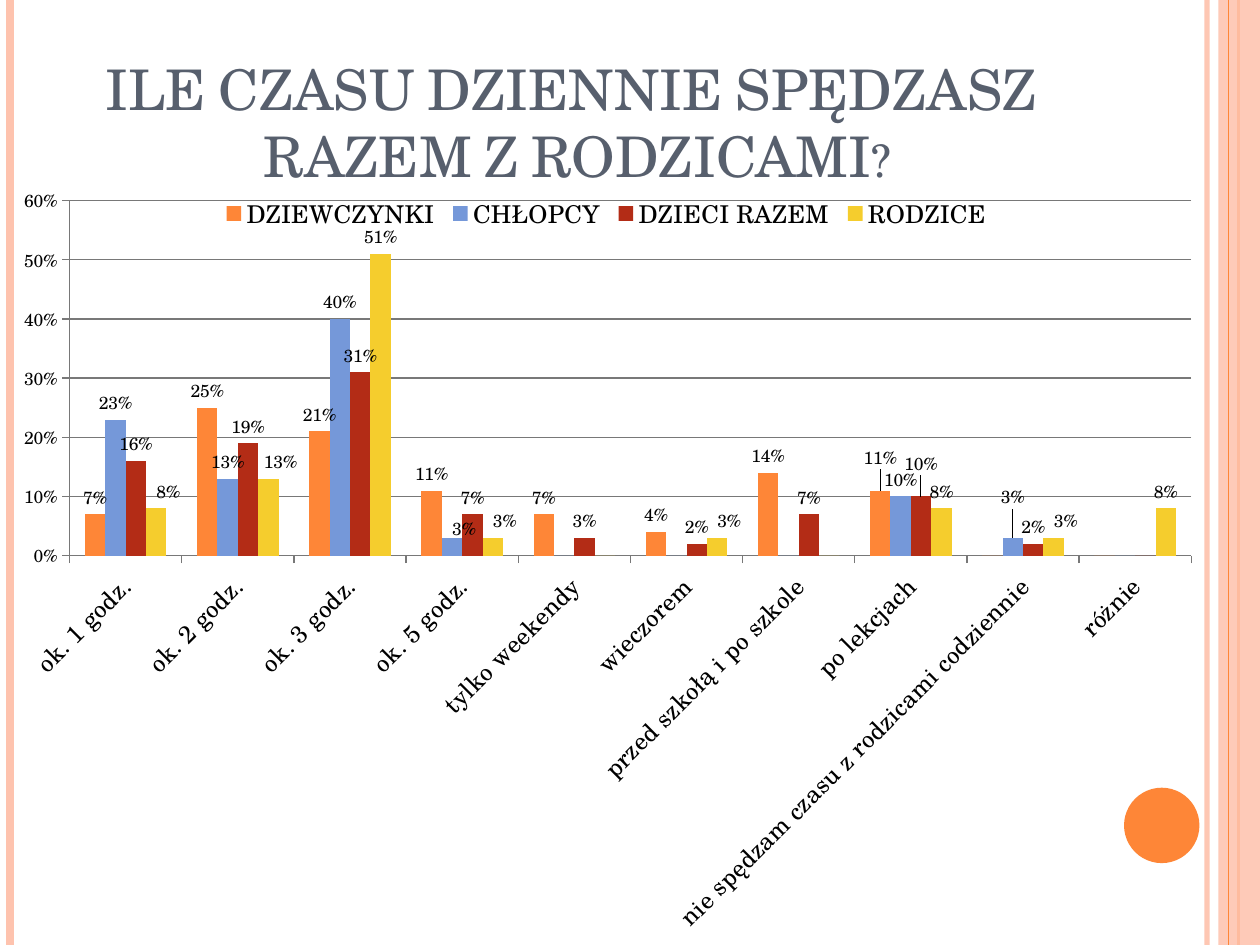
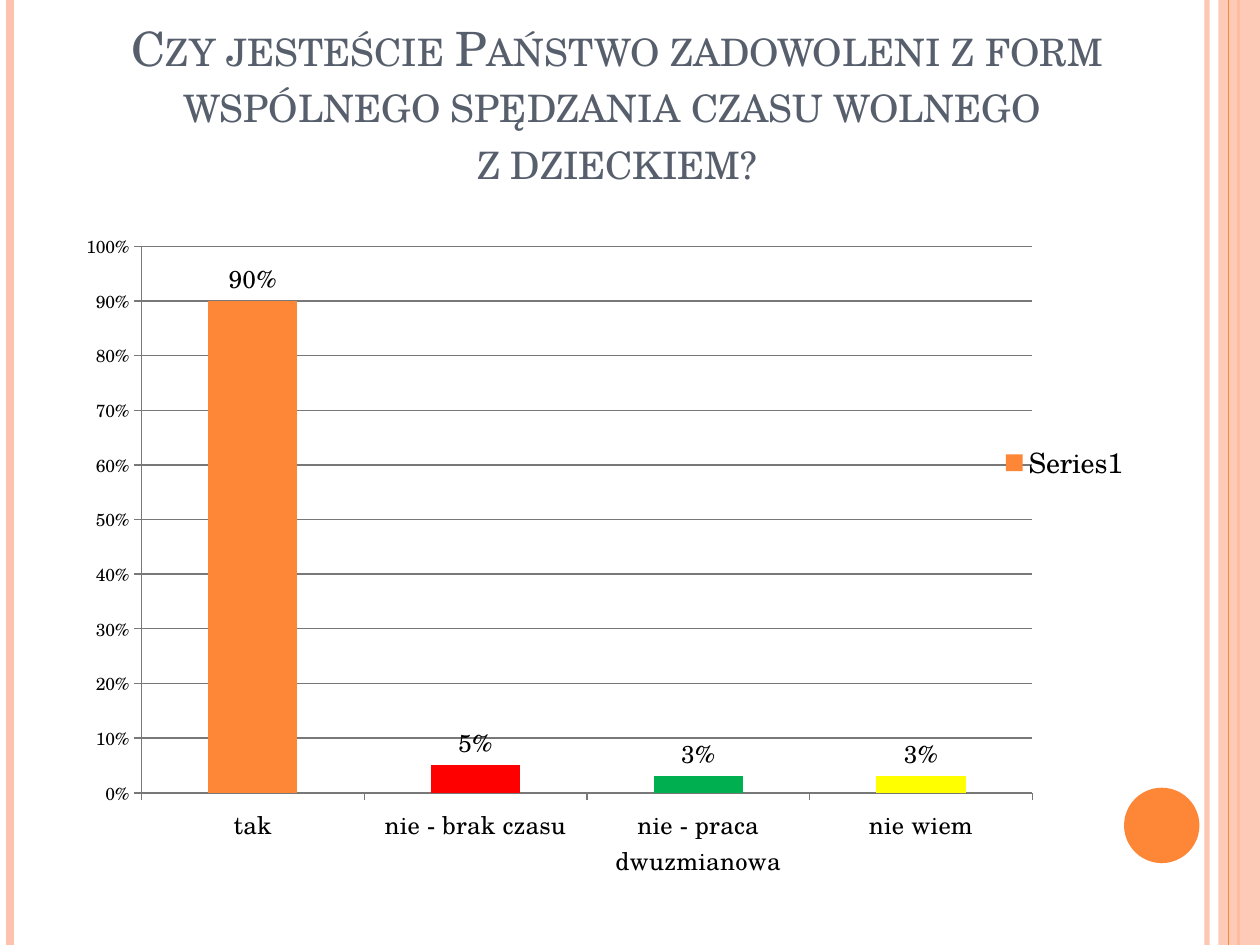
from dataclasses import dataclass, field
from typing import Any, NamedTuple

from lxml import etree
from pptx import Presentation
from pptx import util as u
from pptx.chart import data as chart_data
from pptx.dml import color
from pptx.enum import chart as ch, shapes, text
from pptx.oxml import ns


@dataclass(frozen=True)
class Theme:
    font: str = "TeX Gyre Schola"
    title: str = "575F6D"
    ink: str = "000000"
    grid: str = "787878"
    pale: str = "FEC3AE"
    orange: str = "FE8637"
    blue: str = "7598D9"
    brick: str = "B32C16"
    gold: str = "F5CD2D"
    red: str = "FF0000"
    green: str = "00B050"
    yellow: str = "FFFF00"
    axis_size: float = 10
    category_size: float = 14


class Box(NamedTuple):
    left: float
    top: float
    width: float
    height: float


class Stripe(NamedTuple):
    x: float
    color: str
    weight: float
    opacity: int = 100


class Solid(NamedTuple):
    preset: Any
    box: Box
    color: str
    opacity: int = 100


class Title(NamedTuple):
    box: Box
    lines: tuple[str, ...]
    size: float


@dataclass(frozen=True)
class Answers:
    name: str
    values: tuple[float, ...]
    color: str
    moved_labels: dict[int, tuple[float, float]] = field(default_factory=dict)
    bar_colors: dict[int, str] = field(default_factory=dict)


@dataclass(frozen=True)
class Survey:
    title: Title
    box: Box
    categories: tuple[str, ...]
    answers: tuple[Answers, ...]
    top_value: float
    plot: Box
    legend: Box
    legend_position: Any
    legend_size: float
    label_size: float
    category_rotation: int = 0


T = Theme()
WIDTH, HEIGHT = 25.4, 19.05

DECOR = (
    Stripe(24.33, T.pale, 3, 93),
    Stripe(0.2, T.pale, 4.5),
    Stripe(24.97, T.orange, 1.5),
    Solid(shapes.MSO_SHAPE.RECTANGLE, Box(24.56, 0, 0.84, HEIGHT), T.pale, 87),
    Stripe(24.76, T.orange, 0.75),
    Solid(shapes.MSO_SHAPE.OVAL, Box(22.66, 15.88, 1.52, 1.52), T.orange),
)

SURVEYS = (
    Survey(
        title=Title(Box(1.27, 0.76, 20.75, 3.18),
                    ("ILE CZASU DZIENNIE SPĘDZASZ ", "RAZEM Z RODZICAMI?"), 32),
        box=Box(0, 3.58, 24.21, 16.08),
        categories=("ok. 1 godz.", "ok. 2 godz.", "ok. 3 godz.", "ok. 5 godz.",
                    "tylko weekendy", "wieczorem", "przed szkołą i po szkole",
                    "po lekcjach", "nie spędzam czasu z rodzicami codziennie",
                    "różnie"),
        answers=(
            Answers("DZIEWCZYNKI",
                    (0.07, 0.25, 0.21, 0.11, 0.07, 0.04, 0.14, 0.11, 0, 0),
                    T.orange, {7: (0, -0.02)}),
            Answers("CHŁOPCY",
                    (0.23, 0.13, 0.4, 0.03, 0, 0, 0, 0.1, 0.03, 0),
                    T.blue, {3: (0.01, 0.01), 8: (0, -0.03)}),
            Answers("DZIECI RAZEM",
                    (0.16, 0.19, 0.31, 0.07, 0.03, 0.02, 0.07, 0.1, 0.02, 0),
                    T.brick, {7: (0, -0.02)}),
            Answers("RODZICE",
                    (0.08, 0.13, 0.51, 0.03, 0, 0.03, 0, 0.08, 0.03, 0.08),
                    T.gold, {0: (0.01, 0), 1: (0.01, 0), 3: (0.01, 0),
                             5: (0.01, 0), 8: (0.01, 0)}),
        ),
        top_value=0.6,
        plot=Box(0.058, 0.029, 0.934, 0.445),
        legend=Box(0.18, 0.02, 0.65, 0.05),
        legend_position=ch.XL_LEGEND_POSITION.TOP,
        legend_size=14,
        label_size=10,
        category_rotation=-45,
    ),
    Survey(
        title=Title(Box(1.27, 0.76, 22.35, 3.18),
                    ("Czy jesteście Państwo zadowoleni z form wspólnego "
                     "spędzania czasu wolnego ", "z dzieckiem?"), 27),
        box=Box(1.27, 4.45, 22.94, 13.54),
        categories=("tak", "nie - brak czasu", "nie - praca dwuzmianowa", "nie wiem"),
        answers=(
            Answers("Series1", (0.9, 0.05, 0.03, 0.03), T.orange,
                    bar_colors={1: T.red, 2: T.green, 3: T.yellow}),
        ),
        top_value=1,
        plot=Box(0.069, 0.038, 0.783, 0.814),
        legend=Box(0.82, 0.33, 0.12, 0.06),
        legend_position=ch.XL_LEGEND_POSITION.RIGHT,
        legend_size=16,
        label_size=14,
    ),
)


def rgb(value: str) -> color.RGBColor:
    return color.RGBColor.from_string(value)


def apply(target: Any, values: dict[str, Any]) -> None:
    for name, value in values.items():
        setattr(target, name, value)


def set_font(font: Any, size: float, ink: str = T.ink) -> None:
    apply(font, {"name": T.font, "size": u.Pt(size), "bold": False})
    font.color.rgb = rgb(ink)


def place(box: Box) -> tuple[u.Length, ...]:
    return tuple(u.Cm(v) for v in box)


def child(parent: Any, tag: str, **attrs: Any) -> Any:
    values = {k: str(v) for k, v in attrs.items()}
    return etree.SubElement(parent, ns.qn(tag), values)


def set_fill(fill: Any, value: str, opacity: int = 100) -> None:
    fill.solid()
    fill.fore_color.rgb = rgb(value)
    if opacity < 100:
        clr = fill._xPr.find(".//" + ns.qn("a:srgbClr"))
        child(clr, "a:alpha", val=opacity * 1000)


def add_stripe(s: Any, stripe: Stripe) -> None:
    x = u.Cm(stripe.x)
    sp = s.shapes.add_connector(shapes.MSO_CONNECTOR.STRAIGHT, x, 0, x, u.Cm(HEIGHT))
    sp.line.width = u.Pt(stripe.weight)
    set_fill(sp.line.fill, stripe.color, stripe.opacity)
    child(sp._element.spPr, "a:effectLst")


def add_solid(s: Any, solid: Solid) -> None:
    sp = s.shapes.add_shape(solid.preset, *place(solid.box))
    sp.shadow.inherit = False
    set_fill(sp.fill, solid.color, solid.opacity)
    sp.line.fill.background()


def add_title(s: Any, title: Title) -> None:
    tf = s.shapes.add_textbox(*place(title.box)).text_frame
    apply(tf, {"word_wrap": True, "vertical_anchor": text.MSO_ANCHOR.BOTTOM})
    p = tf.paragraphs[0]
    p.alignment = text.PP_ALIGN.CENTER
    for i, line in enumerate(title.lines):
        if i:
            p.add_line_break()
        r = p.add_run()
        r.text = line
        set_font(r.font, title.size, T.title)
        r.font._element.set("cap", "small")


def make_layout(values: dict[str, Any]) -> Any:
    layout = etree.Element(ns.qn("c:layout"))
    manual = child(layout, "c:manualLayout")
    for tag, value in values.items():
        child(manual, f"c:{tag}", val=value)
    return layout


def set_layout(parent: Any, index: int, box: Box, **extra: str) -> None:
    for old in parent.findall(ns.qn("c:layout")):
        parent.remove(old)
    values = {**extra, "xMode": "edge", "yMode": "edge"}
    values.update(zip("xywh", box))
    parent.insert(index, make_layout(values))


def add_labels(ser: Any, answers: Answers, size: float) -> None:
    labels = ser.data_labels
    apply(labels, {"show_value": True, "number_format": "0%",
                   "number_format_is_linked": False,
                   "position": ch.XL_LABEL_POSITION.OUTSIDE_END})
    set_font(labels.font, size)
    for i, (dx, dy) in answers.moved_labels.items():
        label = ser.points[i].data_label
        label.position = ch.XL_LABEL_POSITION.OUTSIDE_END
        label._dLbl.insert(1, make_layout({"x": dx, "y": dy}))
    for i, value in enumerate(answers.values):
        if not value:
            label = ser.points[i].data_label
            label.position = ch.XL_LABEL_POSITION.OUTSIDE_END
            for part in list(label._dLbl)[1:]:
                label._dLbl.remove(part)
            child(label._dLbl, "c:delete", val=1)


def style_axes(chart: Any, survey: Survey) -> None:
    sizes = ((chart.category_axis, T.category_size), (chart.value_axis, T.axis_size))
    for axis, size in sizes:
        set_font(axis.tick_labels.font, size)
        axis.major_tick_mark = ch.XL_TICK_MARK.OUTSIDE
        axis.format.line.color.rgb = rgb(T.grid)
    value_axis = chart.value_axis
    apply(value_axis, {"minimum_scale": 0, "maximum_scale": survey.top_value,
                       "major_unit": 0.1, "has_major_gridlines": True})
    value_axis.major_gridlines.format.line.color.rgb = rgb(T.grid)
    apply(value_axis.tick_labels, {"number_format": "0%",
                                   "number_format_is_linked": False})
    if survey.category_rotation:
        body = chart.category_axis._element.find(ns.qn("c:txPr")).find(ns.qn("a:bodyPr"))
        body.set("rot", str(survey.category_rotation * 60000))


def add_survey_chart(s: Any, survey: Survey) -> None:
    data = chart_data.CategoryChartData(number_format="0%")
    data.categories = survey.categories
    for answers in survey.answers:
        data.add_series(answers.name, answers.values)
    chart = s.shapes.add_chart(ch.XL_CHART_TYPE.COLUMN_CLUSTERED,
                               *place(survey.box), data).chart
    apply(chart, {"has_title": False, "has_legend": True})
    set_font(chart.font, T.axis_size)
    apply(chart.plots[0], {"vary_by_categories": False, "gap_width": 150, "overlap": 0})
    style_axes(chart, survey)
    for ser, answers in zip(chart.plots[0].series, survey.answers):
        set_fill(ser.format.fill, answers.color)
        for i, value in answers.bar_colors.items():
            set_fill(ser.points[i].format.fill, value)
        add_labels(ser, answers, survey.label_size)
    legend = chart.legend
    apply(legend, {"position": survey.legend_position, "include_in_layout": False})
    set_font(legend.font, survey.legend_size)
    set_layout(legend._element, 1, survey.legend)
    set_layout(chart._chartSpace.chart.plotArea, 0, survey.plot, layoutTarget="inner")


def main() -> None:
    prs = Presentation()
    apply(prs, {"slide_width": u.Cm(WIDTH), "slide_height": u.Cm(HEIGHT)})
    for survey in SURVEYS:
        s = prs.slides.add_slide(prs.slide_layouts[6])
        for item in DECOR:
            draw = add_stripe if isinstance(item, Stripe) else add_solid
            draw(s, item)
        add_title(s, survey.title)
        add_survey_chart(s, survey)
    prs.save("out.pptx")


if __name__ == "__main__":
    main()
